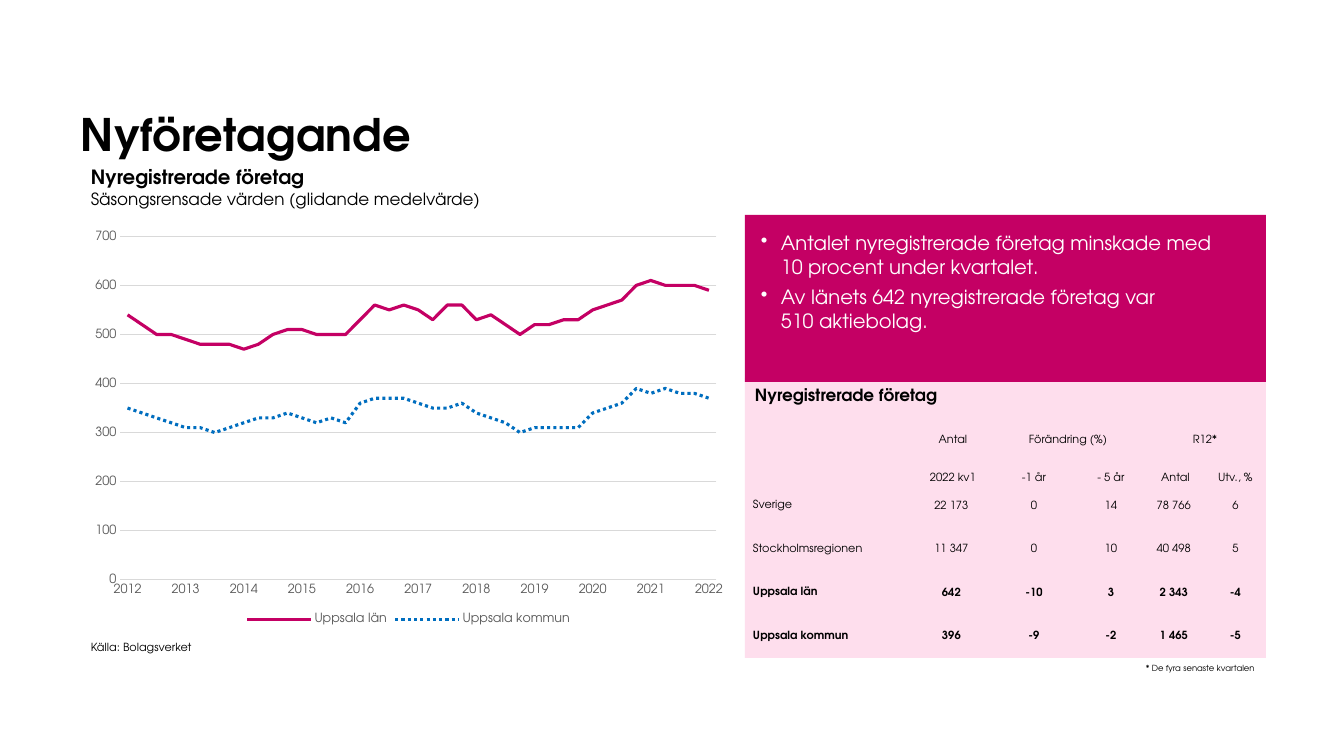
from lxml import etree
from pptx import Presentation, util as u
from pptx.chart.data import CategoryChartData
from pptx.dml.color import RGBColor
from pptx.enum import chart as ch, dml, shapes, text
from pptx.oxml import parse_xml
from pptx.oxml.ns import nsdecls, qn

FONT = "TeX Gyre Adventor"
MAGENTA, PINK, BLUE = "C40064", "FEDEED", "006EBF"
BLACK, WHITE, GREY, GRID = "000000", "FFFFFF", "595959", "D9D9D9"
NO_STYLE = "{2D5ABB26-0587-4C30-8999-92F81FD0307C}"

LABELS = [
    ((81, 160, 416, 54), [("Nyregistrerade företag", 14, True),
                          ("Säsongsrensade värden (glidande medelvärde)", 12, False)]),
    ((81, 635, 127, 24), [("Källa: Bolagsverket", 8, False)]),
    ((745, 380, 206, 30), [("Nyregistrerade företag", 12, True)]),
    ((1136, 658, 130, 20), [("* De fyra senaste kvartalen", 6, False)]),
]
FINDINGS = ["Antalet nyregistrerade företag minskade med \v10 procent under kvartalet.",
            "Av länets 642 nyregistrerade företag var \v510 aktiebolag."]
COLUMNS = [170, 76, 86, 68, 61, 59]
ROWS = [36, 38, 43, 44, 43, 44]
HEADER_ROWS, BOLD_FROM = 2, 4
FIGURES = [
    ["", "Antal", "Förändring (%)", "", "R12*", ""],
    ["", "2022 kv1", "-1 år", "- 5 år", "Antal", "Utv., %"],
    ["Sverige", "22 173 ", "0", "14", "78 766 ", "6"],
    ["Stockholmsregionen", "11 347 ", "0", "10", "40 498 ", "5"],
    ["Uppsala län", "642 ", "-10", "3", "2 343 ", "-4"],
    ["Uppsala kommun", "396 ", "-9", "-2", "1 465 ", "-5"],
]
QUARTERS = [str(2012 + q // 4) if q % 4 == 0 else "" for q in range(41)]
SERIES = [
    ("Uppsala län", MAGENTA, None,
     [540, 520, 500, 500, 490, 480, 480, 480, 470, 480, 500, 510, 510, 500, 500, 500, 530, 560, 550, 560, 550,
      530, 560, 560, 530, 540, 520, 500, 520, 520, 530, 530, 550, 560, 570, 600, 610, 600, 600, 600, 590]),
    ("Uppsala kommun", BLUE, dml.MSO_LINE.ROUND_DOT,
     [350, 340, 330, 320, 310, 310, 300, 310, 320, 330, 330, 340, 330, 320, 330, 320, 360, 370, 370, 370, 360,
      350, 350, 360, 340, 330, 320, 300, 310, 310, 310, 310, 340, 350, 360, 390, 380, 390, 380, 380, 370]),
]
PLOT = {"x": 0.06, "y": 0.04, "w": 0.91, "h": 0.84}


def px(length):
    return u.Emu(round(length * 914400 / 100.8))


def color(code):
    return RGBColor.from_string(code)


def style(font, size, code=BLACK, bold=False):
    font.name, font.size, font.bold = FONT, u.Pt(size), bold
    font.color.rgb = color(code)


def margins(box, left, top, right, bottom):
    box.margin_left, box.margin_top = px(left), px(top)
    box.margin_right, box.margin_bottom = px(right), px(bottom)


def add_panel(slide, place, code):
    panel = slide.shapes.add_shape(shapes.MSO_SHAPE.RECTANGLE, *map(px, place))
    panel.shadow.inherit = False
    panel.fill.solid()
    panel.fill.fore_color.rgb = color(code)
    panel.line.fill.background()
    return panel.text_frame


def add_title(slide):
    frame = slide.shapes.add_textbox(*map(px, (81, 37, 909, 123))).text_frame
    frame.word_wrap = True
    frame.vertical_anchor = text.MSO_ANCHOR.BOTTOM
    margins(frame, 0, 0, 0, 0)
    title = frame.paragraphs[0]
    title.text = "Nyföretagande"
    style(title.font, 32, bold=True)


def add_label(slide, place, lines):
    frame = slide.shapes.add_textbox(*map(px, place)).text_frame
    frame.word_wrap = False
    for i, (words, size, bold) in enumerate(lines):
        line = frame.add_paragraph() if i else frame.paragraphs[0]
        line.text = words
        style(line.font, size, bold=bold)


def add_findings(slide):
    frame = add_panel(slide, (745, 215, 521, 167), MAGENTA)
    frame.word_wrap = True
    frame.vertical_anchor = text.MSO_ANCHOR.TOP
    margins(frame, 16, 16, 16, 16)
    for i, finding in enumerate(FINDINGS):
        point = frame.add_paragraph() if i else frame.paragraphs[0]
        point.text = finding
        point.alignment = text.PP_ALIGN.LEFT
        point.space_before = u.Pt(5 if i else 0)
        props = point._p.get_or_add_pPr()
        props.set("marL", str(px(20)))
        props.set("indent", str(px(-20)))
        etree.SubElement(props, qn("a:buChar")).set("char", "•")
        style(point.font, 14, WHITE)


def add_figures(slide):
    place = map(px, (745, 410, sum(COLUMNS), sum(ROWS)))
    table = slide.shapes.add_table(len(ROWS), len(COLUMNS), *place).table
    table.first_row = table.horz_banding = False
    table._tbl.tblPr.find(qn("a:tableStyleId")).text = NO_STYLE
    for column, width in zip(table.columns, COLUMNS):
        column.width = px(width)
    for row, height in zip(table.rows, ROWS):
        row.height = px(height)
    for r, values in enumerate(FIGURES):
        for c, value in enumerate(values):
            cell = table.cell(r, c)
            cell.fill.background()
            margins(cell, *((1, 1, 1, 0) if c else (8, 0, 0, 0)))
            header = r < HEADER_ROWS
            cell.vertical_anchor = text.MSO_ANCHOR.BOTTOM if header else text.MSO_ANCHOR.MIDDLE
            entry = cell.text_frame.paragraphs[0]
            entry.text = value
            entry.alignment = text.PP_ALIGN.CENTER if c else text.PP_ALIGN.LEFT
            style(entry.font, 8, bold=r >= BOLD_FROM)
    for c in (2, 4):
        table.cell(0, c).merge(table.cell(0, c + 1))


def add_line_chart(slide):
    data = CategoryChartData()
    data.categories = QUARTERS
    for name, _, _, values in SERIES:
        data.add_series(name, values)
    place = map(px, (81, 220, 655, 409))
    chart = slide.shapes.add_chart(ch.XL_CHART_TYPE.LINE, *place, data).chart
    style(chart.font, 10)
    chart.has_title = False
    chart.has_legend = True
    chart.legend.position = ch.XL_LEGEND_POSITION.BOTTOM
    chart.legend.include_in_layout = False
    style(chart.legend.font, 9, GREY)

    chart.plots[0].vary_by_categories = False
    for series, (_, code, dash, _) in zip(chart.plots[0].series, SERIES):
        series.smooth = False
        series.marker.style = ch.XL_MARKER_STYLE.NONE
        series.format.line.width = u.Pt(2.25)
        series.format.line.color.rgb = color(code)
        if dash:
            series.format.line.dash_style = dash

    years, counts = chart.category_axis, chart.value_axis
    for axis in (years, counts):
        axis.major_tick_mark = axis.minor_tick_mark = ch.XL_TICK_MARK.NONE
        style(axis.tick_labels.font, 9, GREY)
    counts.minimum_scale, counts.maximum_scale, counts.major_unit = 0, 700, 100
    counts.format.line.fill.background()
    for rule in (years.format.line, counts.major_gridlines.format.line):
        rule.width = u.Pt(0.75)
        rule.color.rgb = color(GRID)
    skip = parse_xml(f'<c:tickLblSkip {nsdecls("c")} val="4"/>')
    years._element.find(qn("c:noMultiLvlLbl")).addprevious(skip)

    area = chart._chartSpace.chart.plotArea
    for old in area.findall(qn("c:layout")):
        area.remove(old)
    sizes = "".join(f'<c:{side} val="{share}"/>' for side, share in PLOT.items())
    area.insert(0, parse_xml(
        f'<c:layout {nsdecls("c")}><c:manualLayout><c:layoutTarget val="inner"/>'
        f'<c:xMode val="edge"/><c:yMode val="edge"/>{sizes}</c:manualLayout></c:layout>'))


def main():
    """Build the slide on new business registrations."""
    deck = Presentation()
    deck.slide_width, deck.slide_height = px(1344), px(756)
    slide = deck.slides.add_slide(deck.slide_layouts[6])
    add_title(slide)
    add_panel(slide, (745, 378, 521, 280), PINK)
    add_findings(slide)
    for place, lines in LABELS:
        add_label(slide, place, lines)
    add_figures(slide)
    add_line_chart(slide)
    deck.save("out.pptx")


if __name__ == "__main__":
    main()
